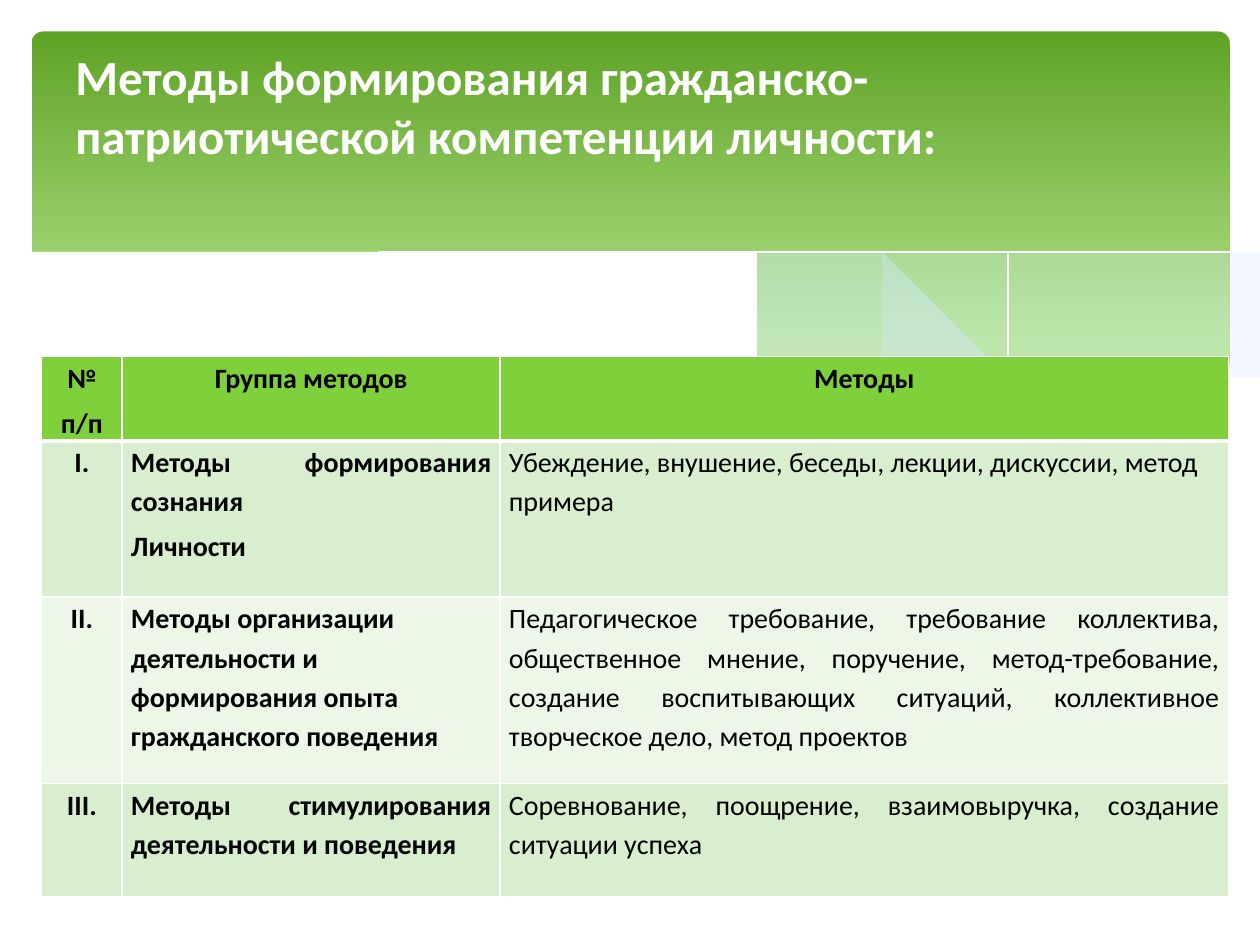
from lxml import etree
from pptx import Presentation
from pptx.dml.color import RGBColor
from pptx.enum import shapes, text
from pptx.oxml.ns import qn
from pptx.util import Inches, Pt

COLORS = {"dark": "5FA326", "light": "B2E389", "ice": "D6ECFF", "white": "FFFFFF",
          "black": "000000", "header": "7FD13B", "odd": "D8EECE", "even": "ECF7E8"}
FONT = "Calibri"
TITLE = "Методы формирования гражданско-патриотической компетенции личности:"
CENTER, LEFT, JUSTIFY = text.PP_ALIGN.CENTER, text.PP_ALIGN.LEFT, text.PP_ALIGN.JUSTIFY

COLUMN_WIDTHS = [0.64, 3, 5.78]
ROW_HEIGHTS = [0.61, 1.24, 1.48, 0.9]
ROWS = [
    [(CENTER, ["№", "п/п"]), (CENTER, ["Группа методов"]), (CENTER, ["Методы"])],
    [(CENTER, ["I."]),
     (JUSTIFY, ["Методы формирования сознания", "Личности"]),
     (LEFT, ["Убеждение, внушение, беседы, лекции, дискуссии, метод примера"])],
    [(CENTER, ["II."]),
     (LEFT, ["Методы организации деятельности и формирования опыта гражданского поведения"]),
     (JUSTIFY, ["Педагогическое требование, требование коллектива, общественное мнение, "
                "поручение, метод-требование, создание воспитывающих ситуаций, "
                "коллективное творческое дело, метод проектов"])],
    [(CENTER, ["III."]),
     (JUSTIFY, ["Методы стимулирования деятельности и поведения"]),
     (JUSTIFY, ["Соревнование, поощрение, взаимовыручка, создание ситуации успеха"])],
]

RIGHT_WAVE = [
    [(9.76, 2), (9.35, 2.07), (8.61, 2.23), (7.79, 2.42), (7.06, 2.57), (6.61, 2.65)],
    [(6.61, 2.65), (7.19, 2.72), (7.69, 2.77), (8.14, 2.78), (8.63, 2.75), (9.05, 2.69),
     (9.42, 2.59), (9.76, 2.47)],
]
MIDDLE_WAVE = [
    [(8.93, 2.73), (8.07, 2.6), (7.06, 2.4), (6.29, 2.22), (5.69, 2.08), (5.14, 1.98),
     (4.65, 1.91), (4.2, 1.87), (3.8, 1.85), (3.28, 1.87), (2.86, 1.91)],
    [(2.86, 1.91), (3.42, 1.99), (4.04, 2.11), (4.91, 2.32), (5.66, 2.48), (6.34, 2.61),
     (6.95, 2.7), (7.48, 2.76), (8.07, 2.78), (8.48, 2.77), (8.93, 2.73)],
]
FALLING_LINE = [[(3.09, 1.95), (3.44, 1.9), (4.01, 1.87), (4.69, 1.89), (5.56, 1.97),
                 (6.36, 2.08), (7.27, 2.26), (8.31, 2.51), (9.07, 2.72)]]
RISING_LINE = [[(6.13, 2.57), (6.72, 2.41), (7.48, 2.23), (8.36, 2.04), (9.1, 1.92), (9.75, 1.85)]]
WHITE_BAND = [
    [(9.77, 2.46), (9.4, 2.59), (8.99, 2.69), (8.5, 2.75), (8.09, 2.77), (7.61, 2.75),
     (6.88, 2.68), (6.03, 2.54), (5.29, 2.39), (4.47, 2.2), (3.65, 2.02), (2.92, 1.9),
     (2.3, 1.85), (1.77, 1.84), (1.32, 1.86), (0.85, 1.93), (0.52, 2.01), (0.23, 2.13)],
    [(0.23, 3.29), (9.77, 3.29)],
]


def rgb(name):
    return RGBColor.from_string(COLORS[name])


def smooth(knots, steps=5):
    if len(knots) < 3:
        return knots
    padded = [knots[0], *knots, knots[-1]]
    points = [knots[0]]
    for before, start, end, after in zip(padded, padded[1:], padded[2:], padded[3:]):
        for step in range(1, steps + 1):
            t = step / steps
            points.append(tuple(
                (2 * b + (c - a) * t + (2 * a - 5 * b + 4 * c - d) * t ** 2
                 + (3 * b - a - 3 * c + d) * t ** 3) / 2
                for a, b, c, d in zip(before, start, end, after)))
    return points


def add_wave(slide, edges, fill=None, alpha=None):
    points = [point for edge in edges for point in smooth(edge)]
    builder = slide.shapes.build_freeform(*points[0], scale=Inches(1))
    builder.add_line_segments(points[1:], close=fill is not None)
    shape = builder.convert_to_shape()
    shape.shadow.inherit = False
    if fill is None:
        shape.fill.background()
        shape.line.color.rgb = rgb("white")
        shape.line.width = Pt(0)
        return
    shape.fill.solid()
    shape.fill.fore_color.rgb = rgb(fill)
    shape.line.fill.background()
    if alpha:
        color = next(shape.fill._xPr.iter(qn("a:srgbClr")))
        etree.SubElement(color, qn("a:alpha"), val=str(alpha * 1000))


def add_run(paragraph, words, size, color, bold):
    run = paragraph.add_run()
    run.text = words
    run.font.name = FONT
    run.font.size = Pt(size)
    run.font.bold = bold
    run.font.color.rgb = rgb(color)


def set_borders(cell, bottom):
    properties = cell._tc.get_or_add_tcPr()
    for index, (side, width) in enumerate([("L", 1), ("R", 1), ("T", 1), ("B", bottom)]):
        line = etree.Element(qn(f"a:ln{side}"), w=str(Pt(width)))
        fill = etree.SubElement(line, qn("a:solidFill"))
        etree.SubElement(fill, qn("a:srgbClr"), val=COLORS["white"])
        properties.insert(index, line)


def add_header(slide):
    panel = slide.shapes.add_shape(shapes.MSO_SHAPE.ROUNDED_RECTANGLE,
                                   Inches(0.25), Inches(0.25), Inches(9.51), Inches(2.7))
    panel.adjustments[0] = 0.034
    panel.shadow.inherit = False
    panel.line.fill.background()
    panel.fill.gradient()
    panel.fill.gradient_angle = 270
    for stop, position, color in zip(panel.fill.gradient_stops, (0, 0.9), ("dark", "light")):
        stop.position = position
        stop.color.rgb = rgb(color)
    add_wave(slide, RIGHT_WAVE, "ice", 29)
    add_wave(slide, MIDDLE_WAVE, "ice", 40)
    add_wave(slide, FALLING_LINE)
    add_wave(slide, RISING_LINE)
    add_wave(slide, WHITE_BAND, "white")


def add_methods_table(slide):
    frame = slide.shapes.add_table(len(ROWS), len(COLUMN_WIDTHS), Inches(0.33), Inches(2.83),
                                   Inches(9.42), Inches(4.5))
    table = frame.table
    for column, width in zip(table.columns, COLUMN_WIDTHS):
        column.width = Inches(width)
    for row, height in zip(table.rows, ROW_HEIGHTS):
        row.height = Inches(height)
    frame.height = Inches(4.5)
    for i, row in enumerate(ROWS):
        for j, (alignment, paragraphs) in enumerate(row):
            cell = table.cell(i, j)
            cell.margin_left = cell.margin_right = Inches(0.07)
            cell.margin_top = cell.margin_bottom = 0
            cell.fill.solid()
            cell.fill.fore_color.rgb = rgb("header" if i == 0 else "odd" if i % 2 else "even")
            set_borders(cell, 3 if i == 0 else 1)
            for k, words in enumerate(paragraphs):
                paragraph = cell.text_frame.add_paragraph() if k else cell.text_frame.paragraphs[0]
                paragraph.alignment = alignment
                paragraph.line_spacing = 1.15
                paragraph.space_before = Pt(1.6 if k else 0)
                paragraph.space_after = Pt(1.6)
                add_run(paragraph, words, 16, "black", i == 0 or j < 2)


def add_title(slide):
    box = slide.shapes.add_textbox(Inches(0.5), Inches(0.37), Inches(9), Inches(1.37))
    box.text_frame.word_wrap = True
    box.text_frame.margin_top = 0
    add_run(box.text_frame.paragraphs[0], TITLE, 28, "white", True)


def main():
    presentation = Presentation()
    presentation.slide_width, presentation.slide_height = Inches(10), Inches(7.5)
    slide = presentation.slides.add_slide(presentation.slide_layouts[6])
    add_header(slide)
    add_methods_table(slide)
    add_title(slide)
    presentation.save("out.pptx")


if __name__ == "__main__":
    main()
